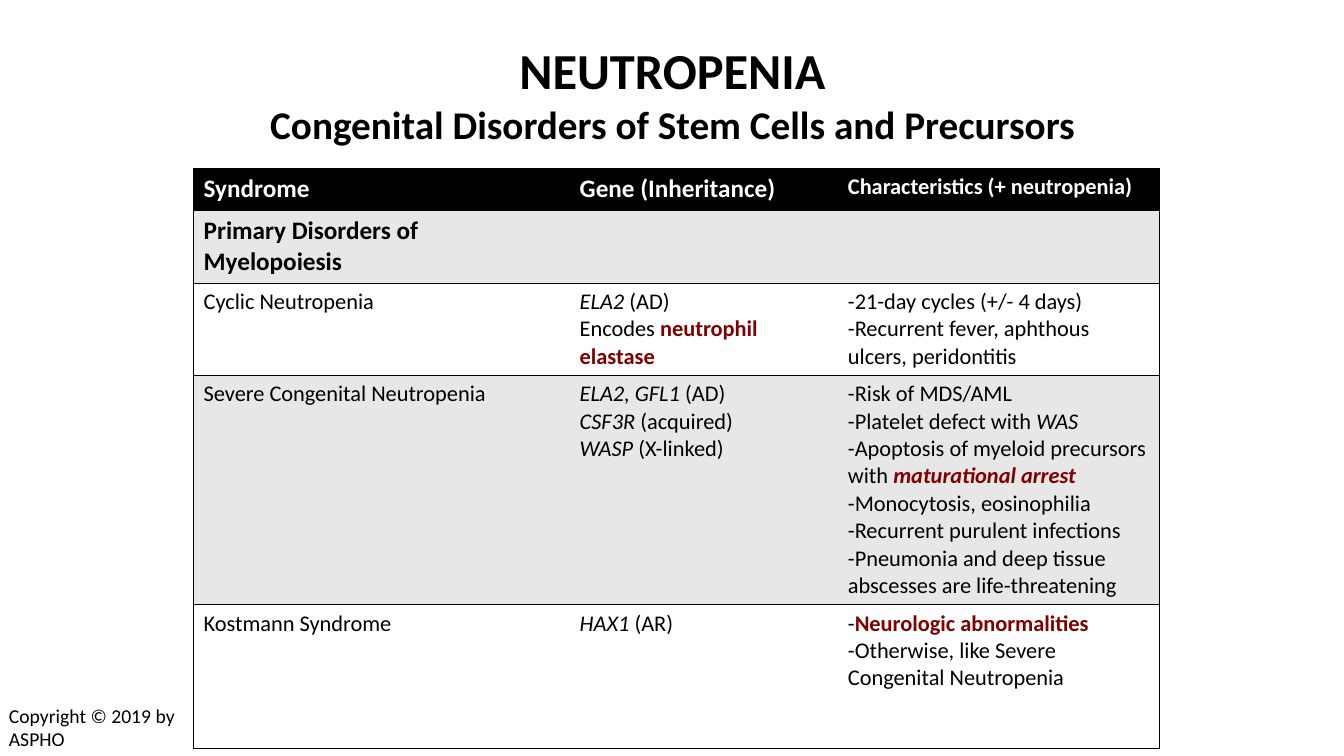
from lxml import etree
from pptx import Presentation
from pptx.dml.color import RGBColor
from pptx.enum.text import MSO_ANCHOR, PP_ALIGN
from pptx.oxml.ns import qn
from pptx.util import Inches, Pt

BLACK = RGBColor(0x00, 0x00, 0x00)
WHITE = RGBColor(0xFF, 0xFF, 0xFF)
GRAY = RGBColor(0xE7, 0xE7, 0xE7)
DARK_RED = RGBColor(0x80, 0x00, 0x00)
MIDDLE = MSO_ANCHOR.MIDDLE
CENTER = PP_ALIGN.CENTER
FONT = "Calibri"
NO_GRID_STYLE = "{2D5ABB26-0587-4C30-8999-92F81FD0307C}"


def style_font(font, size, color=BLACK, bold=False, italic=False):
    font.name = FONT
    font.size = Pt(size)
    font.color.rgb = color
    font.bold = bold
    font.italic = italic


def add_border(cell, position, side):
    """Insert a 1 pt black border line at the given place in the cell properties."""
    line = etree.Element(qn(f"a:{side}"), w=str(Pt(1)))
    fill = etree.SubElement(line, qn("a:solidFill"))
    etree.SubElement(fill, qn("a:srgbClr"), val=str(BLACK))
    cell._tc.get_or_add_tcPr().insert(position, line)


presentation = Presentation()
presentation.slide_width = Inches(13.33)
presentation.slide_height = Inches(7.5)
slide = presentation.slides.add_slide(presentation.slide_layouts[5])

# Title
title = slide.shapes.title
title.left, title.top = Inches(0.67), Inches(0.3)
title.width, title.height = Inches(12), Inches(1.25)
title.text_frame.text = "NEUTROPENIA\vCongenital Disorders of Stem Cells and Precursors"
title.text_frame.vertical_anchor = MIDDLE
title_paragraph = title.text_frame.paragraphs[0]
title_paragraph.alignment = CENTER
for run, size in zip(title_paragraph.runs, (36, 28)):
    style_font(run.font, size, bold=True)

# Table content: cell -> paragraphs -> (text, style); i = italic, r = bold red
header = ["Syndrome", "Gene (Inheritance)", "Characteristics (+ neutropenia)"]
section = ["Primary Disorders of Myelopoiesis", "", ""]
syndromes = [
    [
        [[("Cyclic Neutropenia", "")]],
        [
            [("ELA2", "i"), (" (AD)", "")],
            [("Encodes ", ""), ("neutrophil elastase", "r")],
        ],
        [
            [("-21-day cycles (+/- 4 days)", "")],
            [("-Recurrent fever, aphthous ulcers, peridontitis", "")],
        ],
    ],
    [
        [[("Severe Congenital Neutropenia", "")]],
        [
            [("ELA2, GFL1 ", "i"), ("(AD)", "")],
            [("CSF3R", "i"), (" (acquired)", "")],
            [("WASP", "i"), (" (X-linked)", "")],
        ],
        [
            [("-Risk of MDS/AML", "")],
            [("-Platelet defect with ", ""), ("WAS", "i")],
            [("-Apoptosis of myeloid precursors with ", ""), ("maturational arrest", "ri")],
            [("-Monocytosis, eosinophilia", "")],
            [("-Recurrent purulent infections", "")],
            [("-Pneumonia and deep tissue abscesses are life-threatening", "")],
        ],
    ],
    [
        [[("Kostmann Syndrome", "")]],
        [[("HAX1", "i"), (" (AR)", "")]],
        [
            [("-", ""), ("Neurologic abnormalities", "r")],
            [("-Otherwise, like Severe Congenital Neutropenia", "")],
        ],
    ],
]

# Table frame
column_widths = (3.73, 2.66, 3.19)
row_heights = (0.42, 0.72, 0.9, 2.23, 1.43)
table = slide.shapes.add_table(
    len(row_heights), len(column_widths),
    Inches(1.92), Inches(1.67), Inches(9.58), Inches(5.7),
).table
table._tbl.tblPr.find(qn("a:tableStyleId")).text = NO_GRID_STYLE
for column, width in zip(table.columns, column_widths):
    column.width = Inches(width)
for row, height in zip(table.rows, row_heights):
    row.height = Inches(height)

# Header and section rows
for row_index, (texts, color) in enumerate(((header, WHITE), (section, BLACK))):
    for column_index, text in enumerate(texts):
        if text:
            paragraph = table.cell(row_index, column_index).text_frame.paragraphs[0]
            paragraph.text = text
            size = 16 if column_index == 2 else 18
            style_font(paragraph.runs[0].font, size, color, bold=True)

# Syndrome rows
for row_index, syndrome in enumerate(syndromes, start=2):
    for column_index, paragraphs in enumerate(syndrome):
        text_frame = table.cell(row_index, column_index).text_frame
        for index, runs in enumerate(paragraphs):
            paragraph = text_frame.add_paragraph() if index else text_frame.paragraphs[0]
            for text, style in runs:
                run = paragraph.add_run()
                run.text = text
                red = "r" in style
                style_font(run.font, 16, DARK_RED if red else BLACK, red, "i" in style)

# Fills and borders
row_fills = (BLACK, GRAY, WHITE, GRAY, WHITE)
outer_sides = (["lnL"], [], ["lnR"])
for row, color in zip(table.rows, row_fills):
    for cell, sides in zip(row.cells, outer_sides):
        cell.fill.solid()
        cell.fill.fore_color.rgb = color
        for position, side in enumerate(sides + ["lnT", "lnB"]):
            add_border(cell, position, side)

# Copyright line
copyright_box = slide.shapes.add_textbox(Inches(-0.01), Inches(6.93), Inches(1.93), Inches(0.57))
copyright_box.text_frame.word_wrap = True
copyright_box.text_frame.text = "Copyright © 2019 by ASPHO"
style_font(copyright_box.text_frame.paragraphs[0].runs[0].font, 14)

presentation.save("out.pptx")
